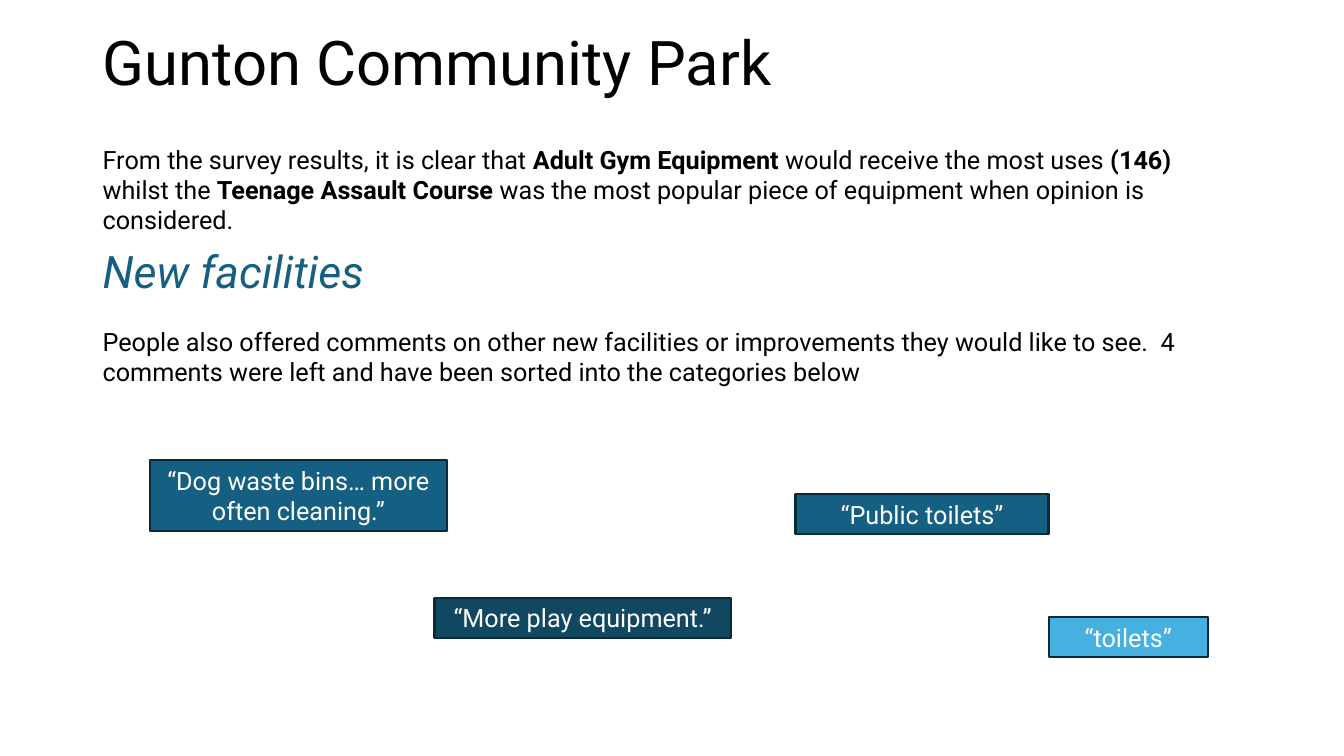
from pptx import Presentation
from pptx.dml.color import RGBColor
from pptx.enum.shapes import MSO_SHAPE
from pptx.enum.text import MSO_ANCHOR, PP_ALIGN
from pptx.util import Inches, Pt


def rgb(value):
    return RGBColor.from_string(value)


class SlideBuilder:
    """Holds the slide and its style, and adds each kind of element."""

    font = "Roboto"
    ink = "000000"
    accent = "156082"
    outline = "092A39"
    left = 0.92

    def __init__(self, slide):
        self.slide = slide

    def style(self, p, size, color, italic=None):
        for r in p.runs:
            r.font.name = self.font
            r.font.size = Pt(size)
            r.font.color.rgb = rgb(color)
            r.font.italic = italic

    def title(self, text):
        sp = self.slide.shapes.title
        sp.left, sp.top = Inches(self.left), Inches(-0.07)
        sp.width, sp.height = Inches(11.5), Inches(1.45)
        tf = sp.text_frame
        tf.text = text
        tf.vertical_anchor = MSO_ANCHOR.MIDDLE
        p = tf.paragraphs[0]
        p.alignment = PP_ALIGN.LEFT
        p.line_spacing = 0.9
        self.style(p, 44, self.ink)

    def text(self, top, width, height, parts, size=18, color=ink, italic=None):
        sp = self.slide.shapes.add_textbox(
            Inches(self.left), Inches(top), Inches(width), Inches(height))
        tf = sp.text_frame
        tf.word_wrap = True
        p = tf.paragraphs[0]
        for words, bold in parts:
            r = p.add_run()
            r.text = words
            r.font.bold = bold
        self.style(p, size, color, italic)

    def quote(self, left, top, width, height, text, fill):
        sp = self.slide.shapes.add_shape(
            MSO_SHAPE.RECTANGLE, Inches(left), Inches(top), Inches(width), Inches(height))
        sp.shadow.inherit = False
        sp.fill.solid()
        sp.fill.fore_color.rgb = rgb(fill)
        sp.line.color.rgb = rgb(self.outline)
        sp.line.width = Pt(1.5)
        tf = sp.text_frame
        tf.word_wrap = True
        tf.text = text
        p = tf.paragraphs[0]
        p.alignment = PP_ALIGN.CENTER
        self.style(p, 18, "FFFFFF")


def main():
    prs = Presentation()
    prs.slide_width, prs.slide_height = Inches(13.33), Inches(7.5)
    s = SlideBuilder(prs.slides.add_slide(prs.slide_layouts[5]))

    s.title("Gunton Community Park")
    s.text(1.38, 11.5, 1.01, [
        ("From the survey results, it is clear that ", False),
        ("Adult Gym Equipment ", True),
        ("would receive the most uses ", False),
        ("(146) ", True),
        ("whilst the ", False),
        ("Teenage Assault Course ", True),
        ("was the most popular piece of equipment when opinion is considered.", False),
    ])
    s.text(2.37, 5.48, 0.64, [("New facilities", False)], 32, s.accent, True)
    s.text(3.19, 11.64, 0.71, [
        ("People also offered comments on other new facilities or improvements they would "
         "like to see.  4 comments were left and have been sorted into the categories below",
         False),
    ])

    quotes = [
        (1.49, 4.56, 2.94, 0.71, "“Dog waste bins… more often cleaning.”", s.accent),
        (7.89, 4.9, 2.51, 0.4, "“Public toilets”", s.accent),
        (4.31, 5.93, 2.94, 0.4, "“More play equipment.”", "104862"),
        (10.4, 6.12, 1.58, 0.4, "“toilets”", "46B1E1"),
    ]
    for quote in quotes:
        s.quote(*quote)

    prs.save("out.pptx")


if __name__ == "__main__":
    main()
